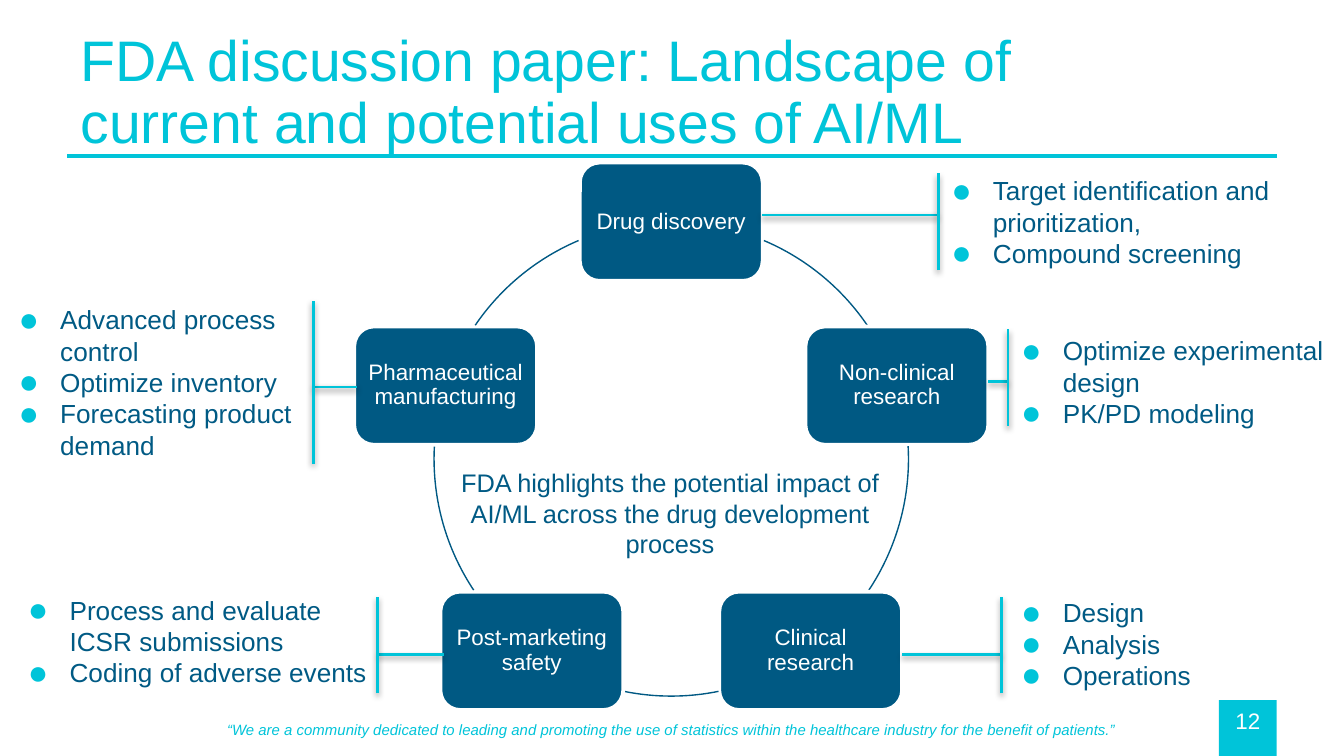
import math

import lxml.etree
import pptx
import pptx.dml.color
import pptx.enum.shapes
import pptx.enum.text
import pptx.oxml
import pptx.oxml.ns
import pptx.util

PX = 9144  # EMU in one px, at 100 px to the inch
SLIDE_WIDTH = 1000
SLIDE_HEIGHT = SLIDE_WIDTH * 9 / 16
FONT = "Arial"
CYAN, NAVY, INK, WHITE = "00C4D9", "005983", "005A84", "FFFFFF"
SHAPE = pptx.enum.shapes.MSO_SHAPE
ALIGN = pptx.enum.text.PP_ALIGN
ANCHOR = pptx.enum.text.MSO_ANCHOR

STAGES = ["Drug discovery", "Non-clinical research", "Clinical research",
          "Post-marketing safety", "Pharmaceutical manufacturing"]
ARCS = [(293, 325.7), (356.9, 33.6), (78.5, 101.5), (146.4, 183.1), (214.3, 247)]

# Bar and stem lengths are measured from the top left of each text box.
CALLOUTS = [
    dict(box=(698, 125, 267, 81), bar=(0, 4, 72), stem_y=35, stem_end=-131,
         items=["Target identification and prioritization,", "Compound screening"]),
    dict(box=(750, 439, 267, 81), bar=(-5, 5, 72), stem_y=48, stem_end=-79,
         items=["Design", "Analysis", "Operations"]),
    dict(box=(11, 437, 273, 81), bar=(270, 7, 72), stem_y=50, stem_end=319,
         items=["Process and evaluate ICSR submissions", "Coding of adverse events"]),
    dict(box=(4, 221, 273, 128), bar=(229, 3, 121), stem_y=67, stem_end=262,
         items=["Advanced process control", "Optimize inventory",
                "Forecasting product demand"]),
    dict(box=(750, 244, 253, 81), bar=(0, 1, 72), stem_y=40, stem_end=-15,
         items=["Optimize experimental design", "PK/PD modeling"]),
]


def emu(*lengths):
    return [pptx.util.Emu(round(length * PX)) for length in lengths]


def rgb(colour):
    return pptx.dml.color.RGBColor.from_string(colour)


def add_bullet(paragraph):
    properties = paragraph._p.get_or_add_pPr()
    indent = 31 * PX
    properties.set("marL", str(indent))
    properties.set("indent", str(-indent))
    namespace = pptx.oxml.ns.nsdecls("a")
    for xml in (f'<a:buClr {namespace}><a:srgbClr val="{CYAN}"/></a:buClr>',
                f'<a:buSzPct {namespace} val="130000"/>',
                f'<a:buFont {namespace} typeface="{FONT}"/>',
                f'<a:buChar {namespace} char="●"/>'):
        properties.append(pptx.oxml.parse_xml(xml))


def write(shape, *lines, size, colour, align=ALIGN.LEFT, anchor=ANCHOR.TOP,
          italic=False, spacing=None, inset=None, bullets=False):
    """Fill a shape with one paragraph for each line."""
    frame = shape.text_frame
    frame.word_wrap = True
    frame.auto_size = pptx.enum.text.MSO_AUTO_SIZE.NONE
    frame.vertical_anchor = anchor
    if inset is not None:
        (frame.margin_left, frame.margin_top,
         frame.margin_right, frame.margin_bottom) = emu(*[inset] * 4)
    for number, line in enumerate(lines):
        paragraph = frame.add_paragraph() if number else frame.paragraphs[0]
        paragraph.alignment = align
        if spacing:
            paragraph.line_spacing = spacing
        if bullets:
            add_bullet(paragraph)
        run = paragraph.add_run()
        run.text = line
        run.font.name = FONT
        run.font.size = pptx.util.Pt(size)
        run.font.italic = italic
        run.font.color.rgb = rgb(colour)


def add_text(slide, box, *lines, **text_format):
    write(slide.shapes.add_textbox(*emu(*box)), *lines, **text_format)


def add_block(slide, kind, box, fill=None, line=None, width=1):
    shape = slide.shapes.add_shape(kind, *emu(*box))
    shape.shadow.inherit = False
    if fill:
        shape.fill.solid()
        shape.fill.fore_color.rgb = rgb(fill)
    else:
        shape.fill.background()
    if line:
        shape.line.color.rgb = rgb(line)
        shape.line.width = pptx.util.Pt(width)
    else:
        shape.line.fill.background()
    return shape


def add_line(slide, start, end, width, shadow=False):
    line = slide.shapes.add_connector(
        pptx.enum.shapes.MSO_CONNECTOR.STRAIGHT, *emu(*start, *end))
    line.line.color.rgb = rgb(CYAN)
    line.line.width = pptx.util.Pt(width)
    effects = lxml.etree.SubElement(line._element.spPr, pptx.oxml.ns.qn("a:effectLst"))
    if shadow:
        effects.append(pptx.oxml.parse_xml(
            f'<a:outerShdw {pptx.oxml.ns.nsdecls("a")} blurRad="39370" dist="20320" '
            'dir="5400000" rotWithShape="0"><a:srgbClr val="000000">'
            '<a:alpha val="38000"/></a:srgbClr></a:outerShdw>'))


def add_header(slide, box):
    left, top, width, height = box
    title = slide.shapes.title
    title.left, title.top, title.width, title.height = emu(left, top, 772, height)
    write(title, "FDA discussion paper: Landscape of current and potential uses of AI/ML",
          size=30.6, colour=CYAN, anchor=ANCHOR.MIDDLE, spacing=0.9)
    add_line(slide, (left + width, top + height - 1), (left, top + height - 1), 2)


def add_footer(slide, box):
    left, top, width, height = box
    tab_width = 43
    tab_left = left + width - tab_width
    add_block(slide, SHAPE.RECTANGLE, (tab_left, top, tab_width, height), CYAN)
    add_text(slide, (left, top + 10, width, 24),
             "“We are a community dedicated to leading and promoting the use of statistics "
             "within the healthcare industry for the benefit of patients.”",
             size=8, colour=CYAN, italic=True, align=ALIGN.CENTER)
    add_text(slide, (tab_left, top, tab_width, 30), "12", size=12, colour=WHITE,
             align=ALIGN.CENTER, anchor=ANCHOR.MIDDLE)


def add_cycle(slide, box):
    """Place the stages evenly round the circle that fills the box."""
    left, top, diameter, _ = box
    radius = diameter / 2
    width, height = 136, 88
    for number, (stage, angles) in enumerate(zip(STAGES, ARCS)):
        turn = 2 * math.pi * number / len(STAGES)
        centre_x = left + radius + radius * math.sin(turn)
        centre_y = top + radius - radius * math.cos(turn)
        node = add_block(slide, SHAPE.ROUNDED_RECTANGLE,
                         (centre_x - width / 2, centre_y - height / 2, width, height),
                         NAVY, WHITE, 2)
        write(node, stage, size=12, colour=WHITE, align=ALIGN.CENTER,
              anchor=ANCHOR.MIDDLE, spacing=0.9, inset=5)
        arc = add_block(slide, SHAPE.ARC, box, line=NAVY, width=0.75)
        for index, angle in enumerate(angles):
            arc.adjustments[index] = angle * 0.6  # 60000 units a degree, over 100000
    add_text(slide, (left - 12, top + 178, diameter + 22, 69),
             "FDA highlights the potential impact of AI/ML across the drug "
             "development process", size=13.6, colour=INK, align=ALIGN.CENTER)


def add_callout(slide, box, items, bar, stem_y, stem_end):
    left, top = box[:2]
    bar_x, bar_y, bar_height = bar
    add_text(slide, box, *items, size=14, colour=INK, bullets=True)
    add_line(slide, (left + bar_x, top + stem_y), (left + stem_end, top + stem_y),
             1.5, shadow=True)
    add_line(slide, (left + bar_x, top + bar_y + bar_height), (left + bar_x, top + bar_y),
             1.5, shadow=True)


def main():
    presentation = pptx.Presentation()
    presentation.slide_width, presentation.slide_height = emu(SLIDE_WIDTH, SLIDE_HEIGHT)
    slide = presentation.slides.add_slide(presentation.slide_layouts[5])
    footer_top = 521
    add_footer(slide, (50, footer_top, 900, SLIDE_HEIGHT - footer_top))
    add_header(slide, (50, 23, 900, 94))
    add_cycle(slide, (323, 165, 353, 353))
    for callout in CALLOUTS:
        add_callout(slide, **callout)
    presentation.save("out.pptx")


if __name__ == "__main__":
    main()
